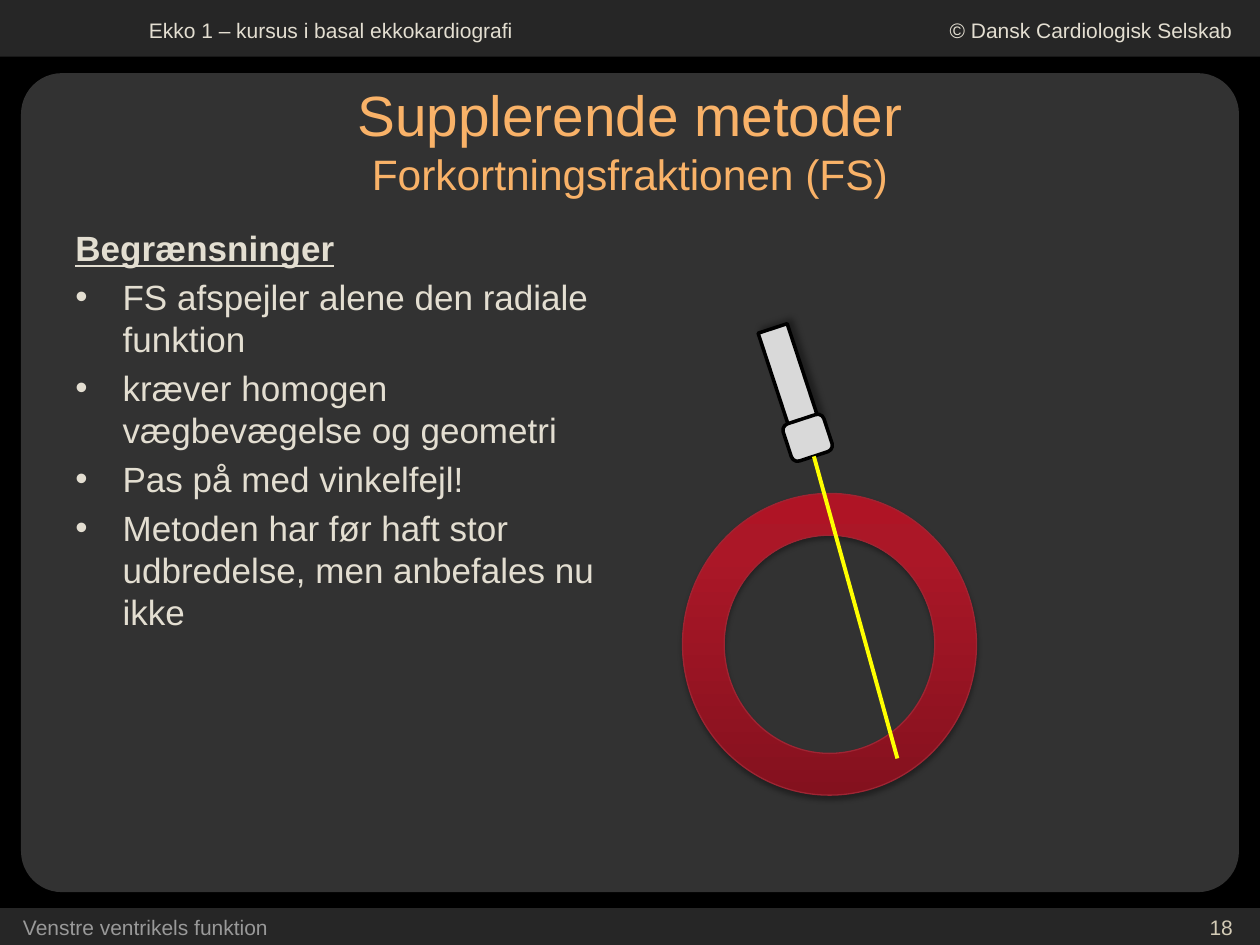
from dataclasses import dataclass

from lxml.etree import SubElement
from pptx import Presentation
from pptx.dml.color import RGBColor
from pptx.enum.shapes import MSO_CONNECTOR, MSO_SHAPE
from pptx.enum.text import MSO_ANCHOR, MSO_AUTO_SIZE, PP_ALIGN
from pptx.oxml import parse_xml
from pptx.oxml.ns import nsdecls, qn
from pptx.util import Pt

COLORS = {
    "background": "000000", "bar": "262626", "panel": "323232",
    "text": "E3DED1", "title": "F9B268", "footer": "999999", "number": "D3CBB6",
    "wall_dark": "84111E", "wall_light": "AB1727", "wall_top": "AF1425",
    "wall_line": "9E2533", "probe": "D9D9D9", "outline": "000000",
    "beam": "FFFF00", "shadow": "000000",
}
FONT = "Arial"
PROBE_ANGLE = 341.8


@dataclass
class Box:
    left: float
    top: float
    width: float
    height: float

    def lengths(self) -> tuple:
        return Pt(self.left), Pt(self.top), Pt(self.width), Pt(self.height)


@dataclass
class Label:
    text: str
    box: Box
    color: str
    align: PP_ALIGN = PP_ALIGN.LEFT


@dataclass
class Shadow:
    alpha: int
    blur: float
    distance: float
    angle: int


def rgb(name: str) -> RGBColor:
    return RGBColor.from_string(COLORS[name])


def format_run(run, size: float, color: str) -> None:
    run.font.name = FONT
    run.font.size = Pt(size)
    run.font.color.rgb = rgb(color)


def draw_shape(shapes, kind: MSO_SHAPE, box: Box, fill: str,
               line: str = "", line_width: float = 0):
    shape = shapes.add_shape(kind, *box.lengths())
    shape.shadow.inherit = False
    shape.fill.solid()
    shape.fill.fore_color.rgb = rgb(fill)
    if line:
        shape.line.color.rgb = rgb(line)
        shape.line.width = Pt(line_width)
    else:
        shape.line.fill.background()
    return shape


def draw_label(shapes, label: Label) -> None:
    frame = shapes.add_textbox(*label.box.lengths()).text_frame
    frame.word_wrap = True
    frame.text = label.text
    frame.paragraphs[0].alignment = label.align
    format_run(frame.paragraphs[0].runs[0], 12, label.color)


def add_shadow(shape, shadow: Shadow) -> None:
    effects = shape._element.spPr.find(qn("a:effectLst"))
    outer = SubElement(effects, qn("a:outerShdw"), {
        "blurRad": str(Pt(shadow.blur)), "dist": str(Pt(shadow.distance)),
        "dir": str(shadow.angle * 60000), "rotWithShape": "0"})
    color = SubElement(outer, qn("a:srgbClr"), val=COLORS["shadow"])
    SubElement(color, qn("a:alpha"), val=str(shadow.alpha * 1000))


def fill_gradient(shape, stops: list[tuple[int, str]], angle: int) -> None:
    marks = "".join(
        f'<a:gs pos="{position * 1000}"><a:srgbClr val="{COLORS[color]}"/></a:gs>'
        for position, color in stops)
    gradient = parse_xml(
        f'<a:gradFill {nsdecls("a")} rotWithShape="1"><a:gsLst>{marks}</a:gsLst>'
        f'<a:lin ang="{angle * 60000}" scaled="0"/></a:gradFill>')
    properties = shape._element.spPr
    properties.replace(properties.find(qn("a:solidFill")), gradient)


def add_bullet(paragraph, indent: float) -> None:
    properties = paragraph._p.get_or_add_pPr()
    properties.set("marL", str(Pt(indent)))
    properties.set("indent", str(-Pt(indent)))
    SubElement(properties, qn("a:buFont"), typeface=FONT)
    SubElement(properties, qn("a:buChar"), char="•")


presentation = Presentation()
presentation.slide_width, presentation.slide_height = Pt(720), Pt(540)
slide = presentation.slides.add_slide(presentation.slide_layouts[5])
slide.background.fill.solid()
slide.background.fill.fore_color.rgb = rgb("background")
shapes = slide.shapes

# Bars and panel
draw_shape(shapes, MSO_SHAPE.RECTANGLE, Box(0, 519, 720, 21), "bar")
draw_shape(shapes, MSO_SHAPE.RECTANGLE, Box(0, 0, 720, 32.4), "bar")
panel = draw_shape(shapes, MSO_SHAPE.ROUNDED_RECTANGLE,
                   Box(12, 41.8, 696, 468), "panel")
panel.adjustments[0] = 0.05

# Header and footer
for label in (
    Label("Ekko 1 – kursus i basal ekkokardiografi", Box(78, 6.5, 270, 21.6), "text"),
    Label("© Dansk Cardiologisk Selskab", Box(496, 6.5, 215.3, 21.6), "text",
          PP_ALIGN.RIGHT),
    Label("Venstre ventrikels funktion", Box(6, 519, 228, 18), "footer"),
    Label("18", Box(543.6, 519, 168, 18), "number", PP_ALIGN.RIGHT),
):
    draw_label(shapes, label)

# Title, brought in front of the panel
title = shapes.title
shapes._spTree.append(title._element)
title.left, title.top, title.width, title.height = Box(36, 48.2, 648, 63.4).lengths()
title.text_frame.text = "Supplerende metoder\vForkortningsfraktionen (FS)"
title.text_frame.auto_size = MSO_AUTO_SIZE.NONE
title.text_frame.vertical_anchor = MSO_ANCHOR.MIDDLE
heading = title.text_frame.paragraphs[0]
heading.alignment = PP_ALIGN.CENTER
for run, size in zip(heading.runs, (32.4, 24.3)):
    format_run(run, size, "title")

# Limitations
limitations = shapes.add_textbox(*Box(36, 126, 318, 378).lengths()).text_frame
limitations.word_wrap = True
limitations.text = "\n".join((
    "Begrænsninger",
    "FS afspejler alene den radiale funktion",
    "kræver homogen vægbevægelse og geometri",
    "Pas på med vinkelfejl!",
    "Metoden har før haft stor udbredelse, men anbefales nu ikke",
))
for index, paragraph in enumerate(limitations.paragraphs):
    if index:
        paragraph.space_before = Pt(4)
        add_bullet(paragraph, 27)
    format_run(paragraph.runs[0], 20, "text")
limitation_heading = limitations.paragraphs[0].runs[0].font
limitation_heading.bold = True
limitation_heading.underline = True

# Ventricle wall in cross-section
ventricle = draw_shape(shapes, MSO_SHAPE.DONUT, Box(390, 282, 168, 172.4),
                       "wall_dark", "wall_line", 0.75)
ventricle.adjustments[0] = 0.142
fill_gradient(ventricle, [(0, "wall_dark"), (80, "wall_light"), (100, "wall_top")], 270)
add_shadow(ventricle, Shadow(35, 3.1, 1.8, 90))

# Ultrasound probe
probe = shapes.add_group_shape().shapes
handle = draw_shape(probe, MSO_SHAPE.RECTANGLE, Box(441.9, 186.2, 17.5, 58.3),
                    "probe", "outline", 2)
add_shadow(handle, Shadow(40, 4, 3, 315))
head = draw_shape(probe, MSO_SHAPE.ROUNDED_RECTANGLE, Box(449.3, 239, 24.5, 22.3),
                  "probe", "outline", 2)
handle.rotation = head.rotation = PROBE_ANGLE

# Ultrasound beam
beam = shapes.add_connector(MSO_CONNECTOR.STRAIGHT,
                            Pt(465.1), Pt(260.8), Pt(512.8), Pt(433.4))
beam.line.color.rgb = rgb("beam")
beam.line.width = Pt(2.25)
SubElement(beam._element.spPr, qn("a:effectLst"))

presentation.save("out.pptx")
